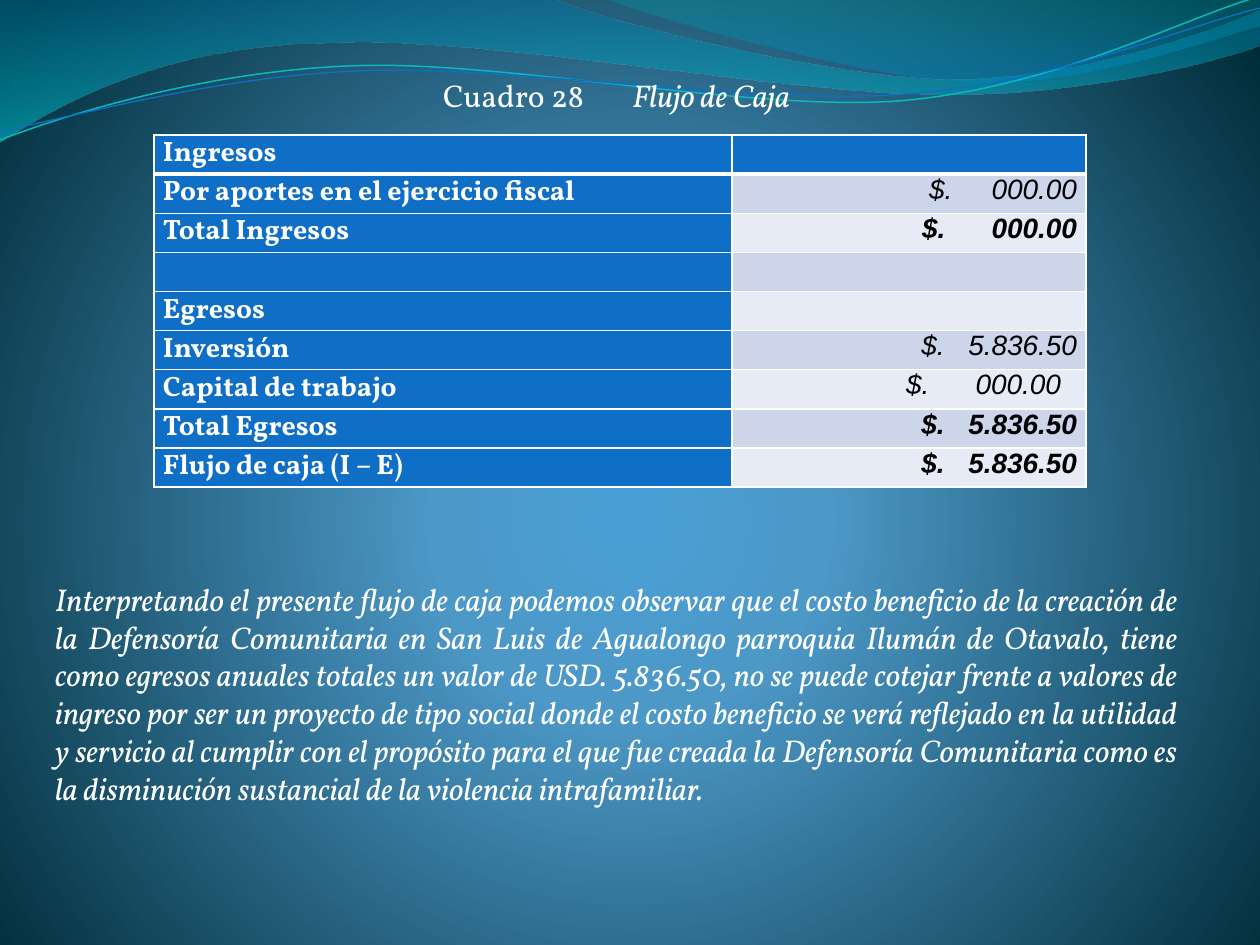
import dataclasses
import math

import pptx
import pptx.dml.color
import pptx.enum.text
import pptx.oxml
import pptx.oxml.ns
import pptx.util

PX = 914400 / 126
ALIGN = pptx.enum.text.PP_ALIGN


@dataclasses.dataclass(frozen=True)
class Theme:
    font: str = "Vollkorn"
    number_font: str = "Arial"
    white: str = "FFFFFF"
    black: str = "000000"
    blue: str = "0F6FC6"
    teal: str = "0AB8BF"
    bands: tuple = ("E7EBF5", "CCD5EA")
    backdrop: tuple = ((0, "4AA0D6", 100), (25, "4C98C7", 100), (100, "002C38", 100))
    wide_wave: tuple = ((0, "0074A1", 45), (100, "00C6CF", 55))
    right_wave: tuple = ((0, "00A1A9", 30), (80, "008BBF", 45))
    body: int = 18
    cell: int = 16


def px(n):
    return pptx.util.Emu(round(n * PX))


def rgb(color):
    return pptx.dml.color.RGBColor.from_string(color)


def xml(text):
    return pptx.oxml.parse_xml(text.replace(">", f" {pptx.oxml.ns.nsdecls('a')}>", 1))


def turn(points, center, degrees):
    cos, sin = math.cos(math.radians(degrees)), math.sin(math.radians(degrees))
    cx, cy = center
    return [(cx + (x - cx) * cos - (y - cy) * sin, cy + (x - cx) * sin + (y - cy) * cos)
            for x, y in points]


class Deck:
    """Holds the theme and the current slide and draws each kind of element."""

    def __init__(self, prs, theme):
        self.theme = theme
        self.s = prs.slides.add_slide(prs.slide_layouts[0])
        title = self.s.shapes.title.element
        title.getparent().remove(title)

    def gradient(self, fill, root, stops, direction):
        fill.solid()
        old = root.find(".//" + pptx.oxml.ns.qn("a:solidFill"))
        gs = "".join(
            f'<a:gs pos="{pos * 1000}"><a:srgbClr val="{color}">'
            f'<a:alpha val="{alpha * 1000}"/></a:srgbClr></a:gs>'
            for pos, color, alpha in stops)
        new = xml(f'<a:gradFill rotWithShape="1"><a:gsLst>{gs}</a:gsLst>{direction}</a:gradFill>')
        old.getparent().replace(old, new)

    def background(self):
        self.gradient(self.s.background.fill, self.s.element, self.theme.backdrop,
                      '<a:path path="circle"><a:fillToRect l="10000" t="110000" '
                      'r="10000" b="100000"/></a:path>')

    def outline(self, start, segments, close):
        ends = [(px(x), px(y)) for x, y in [start] + [seg[-1] for seg in segments]]
        builder = self.s.shapes.build_freeform(*ends[0])
        builder.add_line_segments(ends[1:], close=close)
        sp = builder.convert_to_shape()
        sp.shadow.inherit = False
        lines = list(sp.element.iter(pptx.oxml.ns.qn("a:lnTo")))
        for line, seg in zip(lines, segments):
            if len(seg) == 3:
                pts = "".join(f'<a:pt x="{px(x) - sp.left}" y="{px(y) - sp.top}"/>'
                              for x, y in seg)
                line.getparent().replace(line, xml(f"<a:cubicBezTo>{pts}</a:cubicBezTo>"))
        return sp

    def wave(self, stops, start, *segments):
        sp = self.outline(start, segments, True)
        self.gradient(sp.fill, sp.element, stops, '<a:lin ang="5400000" scaled="1"/>')
        sp.line.fill.background()

    def ripple(self, color, width, center, start, *segments, tilt=2.7):
        level = [turn(seg, center, tilt) for seg in segments]
        sp = self.outline(turn([start], center, tilt)[0], level, False)
        sp.rotation = -tilt
        sp.fill.background()
        sp.line.color.rgb = rgb(color)
        sp.line.width = pptx.util.Pt(width)

    def run(self, p, text, size, color, font=None, bold=False, italic=False, gap=None):
        r = p.add_run()
        r.text = text
        r.font.name = font or self.theme.font
        r.font.size = pptx.util.Pt(size)
        r.font.color.rgb = rgb(color)
        r.font.bold, r.font.italic = bold, italic
        if gap:
            r.font._element.set("spc", str(gap * 100))

    def subtitle(self, box, top, right):
        sp = self.s.placeholders[1]
        sp.element.getparent().append(sp.element)
        sp.left, sp.top, sp.width, sp.height = map(px, box)
        tf = sp.text_frame
        tf.word_wrap = True
        tf.auto_size = pptx.enum.text.MSO_AUTO_SIZE.NONE
        tf.vertical_anchor = pptx.enum.text.MSO_ANCHOR.TOP
        tf.margin_left = tf.margin_bottom = 0
        tf.margin_top, tf.margin_right = px(top), px(right)
        return tf

    def caption(self, tf, label, name, gap):
        p = tf.paragraphs[0]
        p.alignment = ALIGN.CENTER
        p.space_before = 0
        size, color = self.theme.body, self.theme.white
        self.run(p, label, size, color)
        self.run(p, " ", size, color, gap=gap)
        self.run(p, name, size, color, italic=True)

    def paragraph(self, tf, text, before, spacing):
        p = tf.add_paragraph()
        p.alignment = ALIGN.JUSTIFY
        p.space_before = px(before)
        p.line_spacing = pptx.util.Pt(spacing)
        self.run(p, text, self.theme.body, self.theme.white, italic=True)

    def cell(self, cell, fill, header):
        cell.margin_left = cell.margin_right = px(9)
        cell.margin_top = cell.margin_bottom = 0
        tcPr = cell._tc.get_or_add_tcPr()
        for side in "LRTB":
            width = 3 if header and side == "B" else 1
            tcPr.append(xml(f'<a:ln{side} w="{width * 12700}"><a:solidFill><a:srgbClr '
                            f'val="{self.theme.white}"/></a:solidFill></a:ln{side}>'))
        cell.fill.solid()
        cell.fill.fore_color.rgb = rgb(fill)
        return cell.text_frame.paragraphs[0]

    def table(self, left, top, widths, row_height, rows):
        th = self.theme
        table = self.s.shapes.add_table(len(rows), len(widths), px(left), px(top),
                                        px(sum(widths)), px(row_height * len(rows))).table
        for col, width in zip(table.columns, widths):
            col.width = px(width)
        for i, (label, amount, gap, bold, inset) in enumerate(rows):
            p = self.cell(table.cell(i, 0), th.blue, i == 0)
            if label:
                self.run(p, label, th.cell, th.white, bold=True)
            value = table.cell(i, 1)
            p = self.cell(value, th.bands[i % 2] if i else th.blue, i == 0)
            value.margin_right = px(9 + inset)
            if amount:
                p.alignment = ALIGN.RIGHT
                for text, space in (("$.", None), (" ", gap), (amount, None)):
                    self.run(p, text, th.cell, th.black, th.number_font, bold, True, space)


def main():
    prs = pptx.Presentation()
    prs.slide_width, prs.slide_height = px(1260), px(945)
    theme = Theme()
    deck = Deck(prs, theme)
    deck.background()
    deck.wave(theme.wide_wave, (0, 0), [(554, -1)],
              [(600, 21), (837, 79), (955, 79)], [(1075, 79), (1207, 33), (1260, 11)],
              [(1261, 45)], [(1239, 55), (1096, 96), (940, 94)],
              [(783, 94), (481, 35), (324, 43)], [(163, 45), (58, 105), (-1, 142)])
    deck.wave(theme.right_wave, (604, -1), [(641, 14), (859, 78), (969, 82)],
              [(1079, 87), (1211, 40), (1260, 26)], [(1260, 0)])
    deck.ripple(theme.teal, 0.85, (629, 72), (0, 140), [(60, 117), (199, 72), (349, 66)],
                [(498, 59), (747, 112), (898, 101)], [(1050, 89), (1182, 19), (1257, -3)])
    deck.ripple(theme.blue, 0.75, (629, 74), (0, 131), [(59, 121), (207, 77), (357, 71)],
                [(508, 64), (752, 106), (903, 94)], [(1053, 84), (1185, 26), (1260, 8)])
    tf = deck.subtitle((55, 26, 1131, 883), 50, 8)
    deck.caption(tf, "Cuadro 28", "Flujo de Caja", 24)
    deck.paragraph(
        tf,
        "Interpretando el presente flujo de caja podemos observar que el costo beneficio de la "
        "creación de la Defensoría Comunitaria en San Luis de Agualongo parroquia Ilumán de "
        "Otavalo, tiene como egresos anuales totales un valor de USD. 5.836.50, no se puede "
        "cotejar frente a valores de ingreso por ser un proyecto de tipo social donde el costo "
        "beneficio se verá reflejado en la utilidad y servicio al cumplir con el propósito para "
        "el que fue creada la Defensoría Comunitaria como es la disminución sustancial de la "
        "violencia intrafamiliar.", 466, 21.6)
    deck.table(154, 135, (578, 354), 39, (
        ("Ingresos", "", 0, True, 0),
        ("Por aportes en el ejercicio fiscal", "000.00", 18, False, 0),
        ("Total Ingresos", "000.00", 22, True, 0),
        ("", "", 0, False, 0),
        ("Egresos", "", 0, False, 0),
        ("Inversión", "5.836.50", 9, False, 0),
        ("Capital de trabajo", "000.00", 22, False, 16),
        ("Total Egresos", "5.836.50", 9, True, 0),
        ("Flujo de caja (I – E)", "5.836.50", 9, True, 0)))
    prs.save("out.pptx")


if __name__ == "__main__":
    main()
